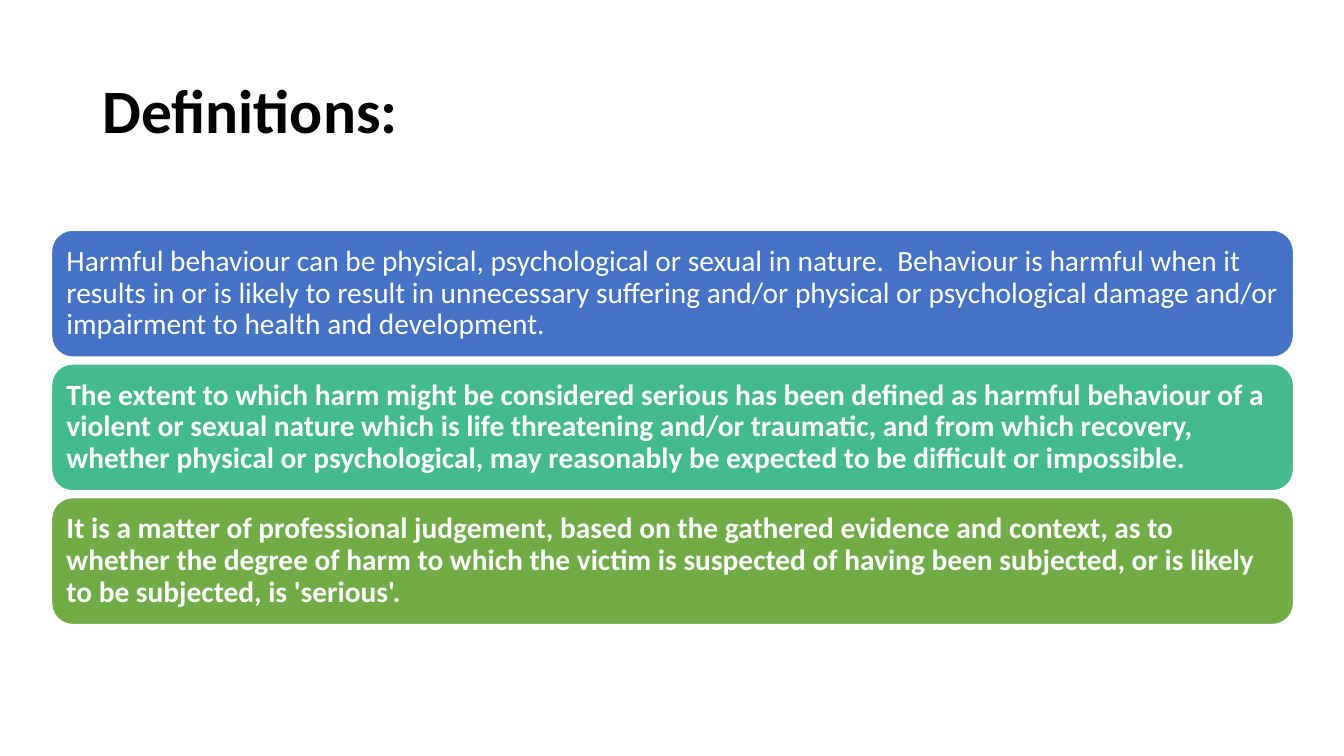
from pptx import Presentation
from pptx.dml.color import RGBColor
from pptx.enum.shapes import MSO_SHAPE as Shape
from pptx.enum.text import MSO_ANCHOR as Anchor, PP_ALIGN as Align
from pptx.util import Cm, Pt


def rgb(value):
    return RGBColor.from_string(value)


class Deck:
    FONT = "Calibri"
    WHITE = "FFFFFF"

    def __init__(self):
        self.prs = Presentation()
        self.prs.slide_width, self.prs.slide_height = Cm(33.87), Cm(19.05)
        self.s = self.prs.slides.add_slide(self.prs.slide_layouts[6])

    def set_text(self, sp, text, size, color, bold):
        tf = sp.text_frame
        tf.word_wrap = True
        tf.vertical_anchor = Anchor.MIDDLE
        p = tf.paragraphs[0]
        p.text = text
        p.alignment = Align.LEFT
        p.line_spacing = 0.9
        p.font.name, p.font.size, p.font.bold = self.FONT, Pt(size), bold
        p.font.color.rgb = rgb(color)
        return tf

    def title(self, text, left, top, width, height):
        sp = self.s.shapes.add_textbox(Cm(left), Cm(top), Cm(width), Cm(height))
        self.set_text(sp, text, 44, "000000", True)

    def panel(self, text, left, top, width, height, fill, bold):
        sp = self.s.shapes.add_shape(
            Shape.ROUNDED_RECTANGLE, Cm(left), Cm(top), Cm(width), Cm(height))
        sp.shadow.inherit = False
        sp.fill.solid()
        sp.fill.fore_color.rgb = rgb(fill)
        sp.line.color.rgb = rgb(self.WHITE)
        sp.line.width = Pt(1)
        tf = self.set_text(sp, text, 21, self.WHITE, bold)
        tf.margin_left = tf.margin_top = tf.margin_bottom = Cm(0.22)
        tf.margin_right = Cm(0.2)


# Panel text, fill and weight, from top to bottom
DEFINITIONS = [
    ("Harmful behaviour can be physical, psychological or sexual in nature.  "
     "Behaviour is harmful when it results in or is likely to result in "
     "unnecessary suffering and/or physical or psychological damage and/or "
     "impairment to health and development.", "4472C4", False),
    ("The extent to which harm might be considered serious has been defined as "
     "harmful behaviour of a violent or sexual nature which is life threatening "
     "and/or traumatic, and from which recovery, whether physical or "
     "psychological, may reasonably be expected to be difficult or impossible.",
     "43BB8D", True),
    ("It is a matter of professional judgement, based on the gathered evidence "
     "and context, as to whether the degree of harm to which the victim is "
     "suspected of having been subjected, or is likely to be subjected, is "
     "'serious'.", "70AD47", True),
]
PANEL_TOP, PANEL_HEIGHT, GAP = 5.8, 3.2, 0.17


def main():
    deck = Deck()

    # Heading
    deck.title("Definitions:", 2.33, 1.01, 29.21, 3.68)

    # Stacked definitions
    for i, (text, fill, bold) in enumerate(DEFINITIONS):
        top = PANEL_TOP + i * (PANEL_HEIGHT + GAP)
        deck.panel(text, 1.3, top, 31.3, PANEL_HEIGHT, fill, bold)

    deck.prs.save("out.pptx")


if __name__ == "__main__":
    main()
